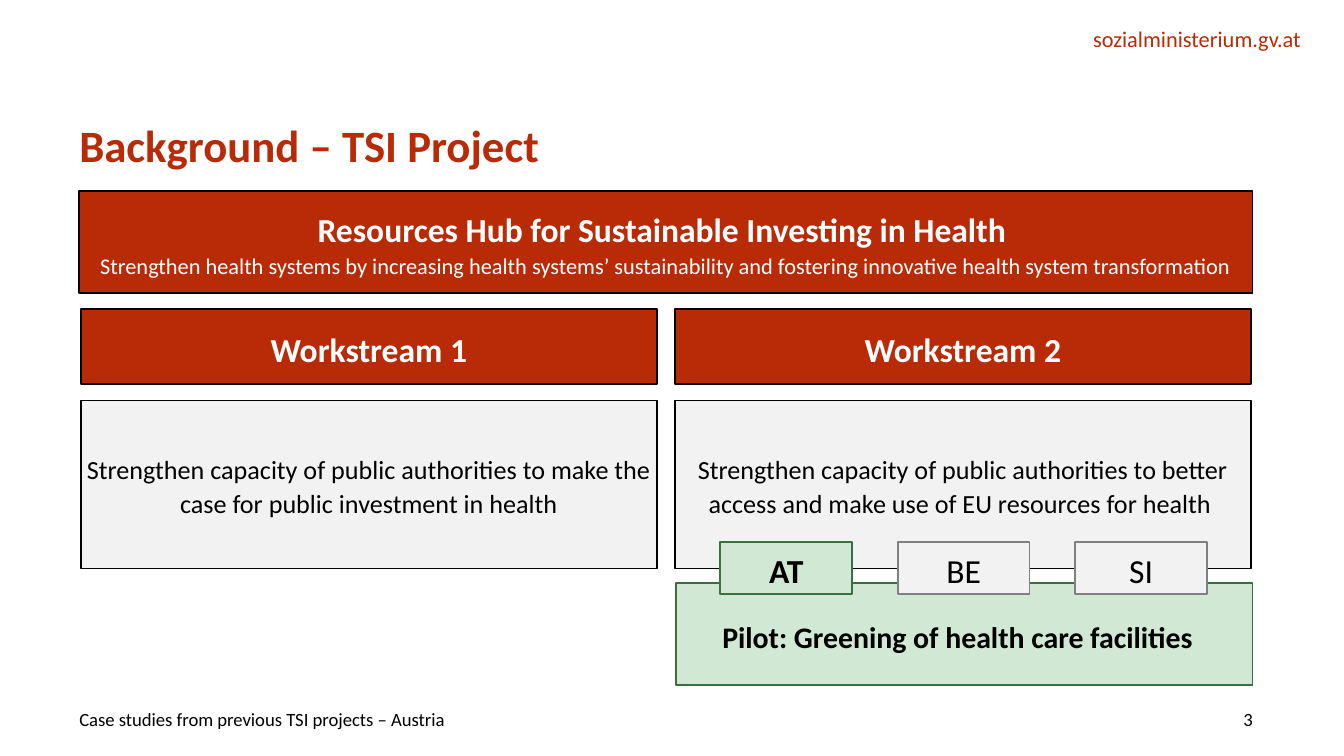
import pptx
import pptx.util
import pptx.dml.color
import pptx.enum.shapes
import pptx.enum.text
from dataclasses import dataclass

Inches, Pt = pptx.util.Inches, pptx.util.Pt
ALIGN = pptx.enum.text.PP_ALIGN
ANCHOR = pptx.enum.text.MSO_ANCHOR


@dataclass(frozen=True)
class Theme:
    font: str = "Calibri"
    red: str = "B92B06"
    green: str = "D1E8D4"
    dark_green: str = "38713F"
    light: str = "F2F2F2"
    grey: str = "808080"
    black: str = "000000"
    white: str = "FFFFFF"
    title: int = 24
    heading: int = 18
    pilot: int = 16
    body: int = 14
    small: int = 12
    footer: int = 10


THEME = Theme()


def rgb(value):
    return pptx.dml.color.RGBColor.from_string(value)


def apply(obj, values):
    for name, value in values.items():
        setattr(obj, name, value)


def add_run(p, text, size, color, bold=False):
    r = p.add_run()
    r.text = text
    apply(r.font, {"name": THEME.font, "size": Pt(size), "bold": bold})
    r.font.color.rgb = rgb(color)


def set_frame(sp, anchor, right=0):
    """Set up the text frame and return its first paragraph."""
    tf = sp.text_frame
    apply(tf, {"word_wrap": True, "vertical_anchor": anchor,
               "margin_left": 0, "margin_top": 0,
               "margin_right": Inches(right), "margin_bottom": 0})
    return tf.paragraphs[0]


def add_label(s, box, text, size, color, bold=False, align=ALIGN.LEFT,
              anchor=ANCHOR.MIDDLE, spacing=None):
    sp = s.shapes.add_textbox(*map(Inches, box))
    p = set_frame(sp, anchor)
    apply(p, {"alignment": align, "line_spacing": spacing})
    add_run(p, text, size, color, bold)


def add_box(s, box, fill, line, lines, right=0):
    """Draw a bordered box; each line is (text, size, color, bold)."""
    sp = s.shapes.add_shape(pptx.enum.shapes.MSO_SHAPE.RECTANGLE,
                            *map(Inches, box))
    sp.shadow.inherit = False
    sp.fill.solid()
    sp.fill.fore_color.rgb = rgb(fill)
    sp.line.color.rgb = rgb(line)
    sp.line.width = Pt(1)
    p = set_frame(sp, ANCHOR.MIDDLE, right)
    apply(p, {"alignment": ALIGN.CENTER, "line_spacing": 1.1,
              "space_after": Pt(12)})
    for i, line_args in enumerate(lines):
        if i:
            p.add_line_break()
        add_run(p, *line_args)


def main():
    t = THEME
    prs = pptx.Presentation()
    # Widescreen, 16:9
    apply(prs, {"slide_width": Inches(10), "slide_height": Inches(10 * 9 / 16)})
    s = prs.slides.add_slide(prs.slide_layouts[6])

    # Header and title
    add_label(s, (7.27, 0.19, 2.41, 0.2), "sozialministerium.gv.at", t.small,
              t.red, align=ALIGN.RIGHT, anchor=ANCHOR.TOP)
    add_label(s, (0.59, 0.86, 8.73, 0.47), "Background – TSI Project",
              t.title, t.red, bold=True, anchor=ANCHOR.TOP, spacing=Pt(30))

    # Project banner
    add_box(s, (0.59, 1.42, 8.73, 0.76), t.red, t.black, [
        ("Resources Hub for Sustainable Investing in Health ",
         t.heading, t.white, True),
        ("Strengthen health systems by increasing health systems’ "
         "sustainability and fostering innovative health system "
         "transformation", t.small, t.white, False)])

    # Workstream columns
    workstreams = [
        ("Workstream 1", "Strengthen capacity of public authorities to make "
         "the case for public investment in health"),
        ("Workstream 2", "Strengthen capacity of public authorities to better "
         "access and make use of EU resources for health ")]
    for i, (heading, goal) in enumerate(workstreams):
        x = 0.6 + i * 4.42
        add_box(s, (x, 2.3, 4.29, 0.56), t.red, t.black,
                [(heading, t.heading, t.white, True)])
        add_box(s, (x, 2.98, 4.29, 1.25), t.light, t.black,
                [(goal, t.body, t.black, False)])

    # Pilot with country tags; the pilot country is highlighted
    add_box(s, (5.03, 4.34, 4.29, 0.76), t.green, t.dark_green,
            [("Pilot: Greening of health care facilities", t.pilot,
              t.black, True)], right=0.1)
    for i, country in enumerate(("AT", "BE", "SI")):
        is_pilot = country == "AT"
        fill, line = ((t.green, t.dark_green) if is_pilot
                      else (t.light, t.grey))
        add_box(s, (5.36 + i * 1.32, 4.03, 0.98, 0.39), fill, line,
                [(country, t.heading, t.black, is_pilot)])

    # Footer
    add_label(s, (0.59, 5.24, 7.52, 0.22),
              "Case studies from previous TSI projects – Austria",
              t.footer, t.black)
    add_label(s, (8.27, 5.24, 1.05, 0.22), "3", t.footer, t.black,
              align=ALIGN.RIGHT)

    prs.save("out.pptx")


if __name__ == "__main__":
    main()
